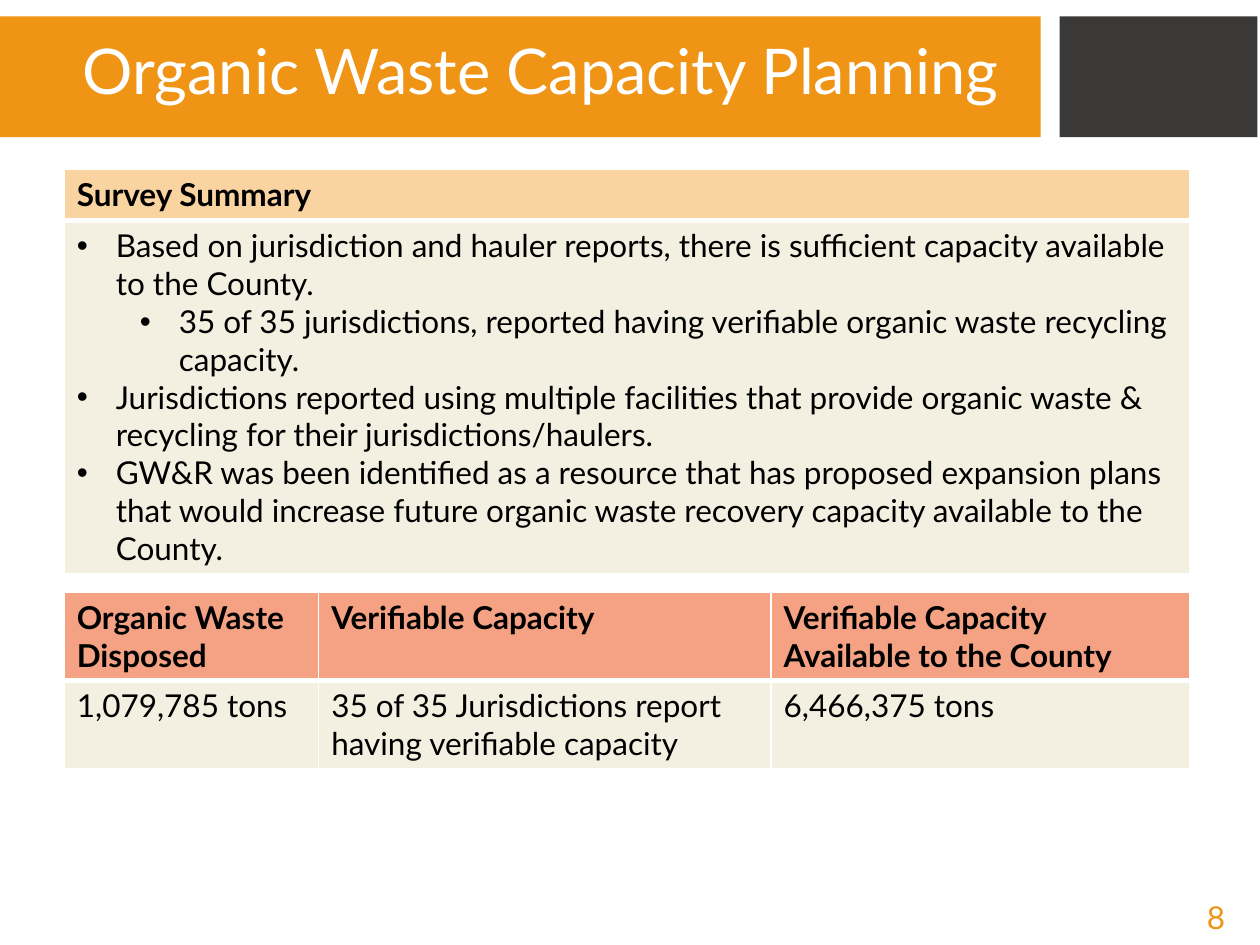
from lxml import etree
from pptx import Presentation
from pptx import util as u
from pptx.dml.color import RGBColor
from pptx.enum import shapes, text
from pptx.oxml import ns

ORANGE = RGBColor(0xF0, 0x94, 0x15)
CHARCOAL = RGBColor(0x3B, 0x38, 0x38)
PEACH = RGBColor(0xF9, 0xD4, 0xA1)
SALMON = RGBColor(0xF4, 0xA2, 0x83)
CREAM = RGBColor(0xF3, 0xF0, 0xE1)
BLACK = RGBColor(0, 0, 0)
WHITE = RGBColor(0xFF, 0xFF, 0xFF)

SURVEY_POINTS = [
    (0, "Based on jurisdiction and hauler reports, there is sufficient capacity available to the County."),
    (1, "35 of 35 jurisdictions, reported having verifiable organic waste recycling capacity."),
    (0, "Jurisdictions reported using multiple facilities that provide organic waste & recycling for their jurisdictions/haulers."),
    (0, "GW&R was been identified as a resource that has proposed expansion plans that would increase future organic waste recovery capacity available to the County."),
]


class SlideBuilder:
    body = {"name": "Lato", "size": u.Pt(18), "bold": False}

    def __init__(self, page):
        self.page = page

    def add_span(self, para, words, color, **changes):
        span = para.add_run()
        span.text = words
        for name, value in {**self.body, **changes}.items():
            setattr(span.font, name, value)
        span.font.color.rgb = color

    def block(self, place, color):
        box = self.page.shapes.add_shape(
            shapes.MSO_SHAPE.RECTANGLE, *map(u.Inches, place))
        box.shadow.inherit = False
        box.fill.solid()
        box.fill.fore_color.rgb = color
        box.line.fill.background()

    def label(self, place, words, color, frame_format, para_format, **changes):
        frame = self.page.shapes.add_textbox(*map(u.Inches, place)).text_frame
        for name, value in frame_format.items():
            setattr(frame, name, value)
        para = frame.paragraphs[0]
        for name, value in para_format.items():
            setattr(para, name, value)
        self.add_span(para, words, color, **changes)

    def bullet(self, para, level):
        para.level = level
        properties = para._p.get_or_add_pPr()
        properties.set("marL", str(u.Inches(0.31 + 0.5 * level)))
        properties.set("indent", str(u.Inches(-0.31)))
        font = etree.SubElement(properties, ns.qn("a:buFont"))
        font.set("typeface", "Arial")
        etree.SubElement(properties, ns.qn("a:buChar")).set("char", "•")

    def borders(self, cell, bottom):
        properties = cell._tc.get_or_add_tcPr()
        widths = {"lnL": 1, "lnR": 1, "lnT": 1, "lnB": bottom}
        for index, (side, width) in enumerate(widths.items()):
            line = etree.Element(ns.qn(f"a:{side}"), w=str(u.Pt(width)))
            fill = etree.SubElement(line, ns.qn("a:solidFill"))
            etree.SubElement(fill, ns.qn("a:srgbClr"), val=str(WHITE))
            properties.insert(index, line)

    def table(self, top, columns, heights, rows, header_color):
        frame = self.page.shapes.add_table(
            len(rows), len(columns), u.Inches(0.51), u.Inches(top),
            u.Inches(sum(columns)), u.Inches(sum(heights)))
        grid = frame.table
        for column, width in zip(grid.columns, columns):
            column.width = u.Inches(width)
        for index, (height, row) in enumerate(zip(heights, rows)):
            header = index == 0
            grid.rows[index].height = u.Inches(height)
            for cell, content in zip(grid.rows[index].cells, row):
                cell.fill.solid()
                cell.fill.fore_color.rgb = header_color if header else CREAM
                self.borders(cell, 3 if header else 1)
                self.fill_cell(cell.text_frame, content, header)

    def fill_cell(self, frame, content, bold):
        if isinstance(content, str):
            self.add_span(frame.paragraphs[0], content, BLACK, bold=bold)
            return
        for index, (level, words) in enumerate(content):
            para = frame.add_paragraph() if index else frame.paragraphs[0]
            self.bullet(para, level)
            self.add_span(para, words, BLACK, bold=bold)


def main():
    deck = Presentation()
    deck.slide_width, deck.slide_height = u.Inches(10), u.Inches(7.5)
    builder = SlideBuilder(deck.slides.add_slide(deck.slide_layouts[6]))

    builder.label((9.48, 7.08, 0.52, 0.4), "8", ORANGE,
                  {"word_wrap": False}, {})
    builder.block((-0.02, 0.13, 8.28, 0.96), ORANGE)
    builder.block((8.41, 0.13, 1.57, 0.96), CHARCOAL)
    builder.label((0.56, 0, 7.54, 1.18), "Organic Waste Capacity Planning", WHITE,
                  {"word_wrap": True, "vertical_anchor": text.MSO_ANCHOR.MIDDLE},
                  {"line_spacing": 0.9}, size=u.Pt(36))
    builder.table(4.7, [2.02, 3.59, 3.32], [0.7, 0.7], [
        ["Organic Waste Disposed", "Verifiable Capacity",
         "Verifiable Capacity Available to the County"],
        ["1,079,785 tons", "35 of 35 Jurisdictions report having verifiable capacity",
         "6,466,375 tons"],
    ], SALMON)
    builder.table(1.34, [8.93], [0.41, 2.8],
                  [["Survey Summary"], [SURVEY_POINTS]], PEACH)
    deck.save("out.pptx")


if __name__ == "__main__":
    main()
